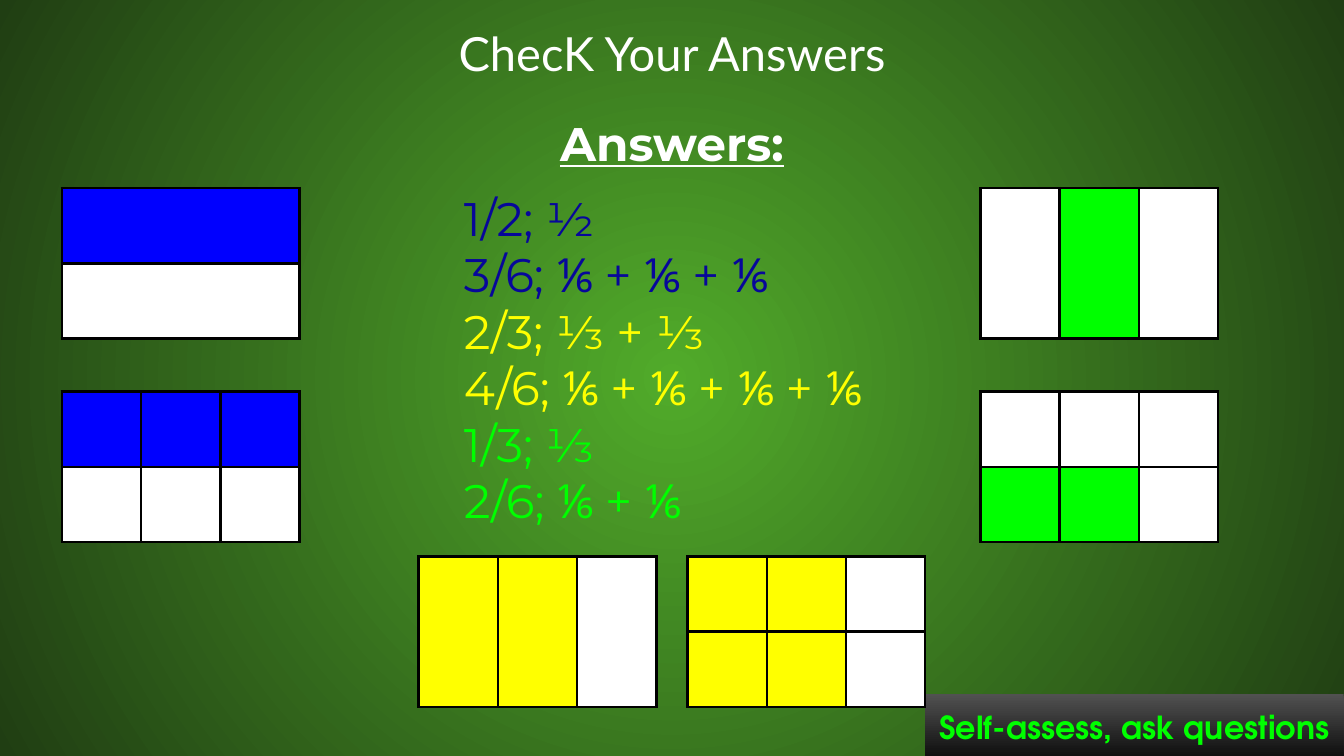
"""Build the fraction answers slide with its six shaded fraction grids."""
from dataclasses import dataclass
from typing import Any

from lxml import etree
from pptx import Presentation
from pptx.dml.color import RGBColor
from pptx.enum.shapes import MSO_SHAPE
from pptx.enum.text import MSO_ANCHOR, PP_ALIGN
from pptx.oxml.ns import qn
from pptx.util import Inches, Pt

RECTANGLE = MSO_SHAPE.RECTANGLE
TOP = MSO_ANCHOR.TOP
CENTER, LEFT = PP_ALIGN.CENTER, PP_ALIGN.LEFT
UNIT = Inches(0.1)
COLUMNS, ROWS = 3, 2
CELL_WIDTH, CELL_HEIGHT = 5.9, 5.6
WHITE, BLACK, NAVY = "FFFFFF", "000000", "07079A"
BLUE, YELLOW, GREEN = "0000FF", "FFFF00", "00FF00"
TITLE_FORMAT = {"name": "Lato", "size": Pt(25.2)}
ANSWER_FORMAT = {"name": "Montserrat", "size": Pt(25.2)}
HEADING_FORMAT = ANSWER_FORMAT | {"bold": True, "underline": True}
BANNER_FORMAT = {"name": "TeX Gyre Adventor", "size": Pt(17), "bold": True}


@dataclass(frozen=True)
class Area:
    """A place on the slide, in grid columns and rows."""
    left: float
    top: float
    width: float
    height: float

    def lengths(self) -> list[int]:
        """Return the place as slide lengths."""
        return [round(value * UNIT) for value in (self.left, self.top, self.width, self.height)]


@dataclass(frozen=True)
class Line:
    """A line of text with its colour and format."""
    text: str
    color: str
    style: dict[str, Any]
    alignment: PP_ALIGN = CENTER
    space_before: float = 0


@dataclass(frozen=True)
class FractionGrid:
    """A fraction picture; X marks a shaded cell."""
    left: float
    top: float
    color: str
    pattern: tuple[str, str]
    column_lines: bool = True
    row_lines: bool = True


GRIDS = (
    FractionGrid(4.6, 14, BLUE, ("XXX", "---"), column_lines=False),
    FractionGrid(4.6, 29.13, BLUE, ("XXX", "---")),
    FractionGrid(51.15, 41.4, YELLOW, ("XX-", "XX-")),
    FractionGrid(31.15, 41.4, YELLOW, ("XX-", "XX-"), row_lines=False),
    FractionGrid(72.94, 14, GREEN, ("-X-", "-X-"), row_lines=False),
    FractionGrid(72.94, 29.13, GREEN, ("---", "XX-")),
)
ANSWERS = (
    ("1/2; ½", NAVY), ("3/6; ⅙ + ⅙ + ⅙", NAVY),
    ("2/3; ⅓ + ⅓", YELLOW), ("4/6; ⅙ + ⅙ + ⅙ + ⅙", YELLOW),
    ("1/3; ⅓", GREEN), ("2/6; ⅙ + ⅙", GREEN),
)


def color_of(value: str) -> RGBColor:
    """Turn a hex string into a colour."""
    return RGBColor.from_string(value)


def set_gradient(fill: Any, start: str, end: str) -> None:
    """Give a fill a gradient of two colours."""
    fill.gradient()
    for stop, value in zip(fill.gradient_stops, (start, end)):
        stop.color.rgb = color_of(value)


def paint_background(page: Any) -> None:
    """Paint a radial green background."""
    set_gradient(page.background.fill, "51AB2A", "203E13")
    linear = next(page.element.iter(qn("a:lin")))
    radial = etree.Element(qn("a:path"), {"path": "circle"})
    etree.SubElement(radial, qn("a:fillToRect"), dict.fromkeys("ltrb", "50000"))
    linear.getparent().replace(linear, radial)


def write_lines(shape: Any, lines: list[Line]) -> None:
    """Write formatted lines into a shape."""
    frame = shape.text_frame
    frame.word_wrap = True
    frame.vertical_anchor = TOP
    for side in ("left", "top", "right", "bottom"):
        setattr(frame, f"margin_{side}", UNIT)
    for index, line in enumerate(lines):
        para = frame.add_paragraph() if index else frame.paragraphs[0]
        para.alignment = line.alignment
        para.space_before = Pt(line.space_before)
        span = para.add_run()
        span.text = line.text
        span.font.color.rgb = color_of(line.color)
        for name, value in line.style.items():
            setattr(span.font, name, value)


def add_text(page: Any, area: Area, lines: list[Line]) -> None:
    """Add a text box."""
    write_lines(page.shapes.add_textbox(*area.lengths()), lines)


def add_banner(page: Any, area: Area, line: Line) -> None:
    """Add the shaded banner."""
    banner = page.shapes.add_shape(RECTANGLE, *area.lengths())
    banner.shadow.inherit = False
    banner.line.fill.background()
    set_gradient(banner.fill, "515151", "101010")
    banner.fill.gradient_angle = 270
    write_lines(banner, [line])


def set_borders(cell: Any, visible: dict[str, bool]) -> None:
    """Draw or hide each border of a cell."""
    properties = cell._tc.get_or_add_tcPr()
    for index, (side, shown) in enumerate(visible.items()):
        border = etree.Element(qn(f"a:ln{side}"), {"w": str(Pt(1.5))})
        if shown:
            solid = etree.SubElement(border, qn("a:solidFill"))
            etree.SubElement(solid, qn("a:srgbClr"), {"val": BLACK})
        else:
            etree.SubElement(border, qn("a:noFill"))
        properties.insert(index, border)


def add_grid(page: Any, grid: FractionGrid) -> None:
    """Add a fraction grid as a table."""
    area = Area(grid.left, grid.top, COLUMNS * CELL_WIDTH, ROWS * CELL_HEIGHT)
    table = page.shapes.add_table(ROWS, COLUMNS, *area.lengths()).table
    table.first_row = table.horz_banding = False
    for row, marks in enumerate(grid.pattern):
        for column, mark in enumerate(marks):
            cell = table.cell(row, column)
            cell.fill.solid()
            cell.fill.fore_color.rgb = color_of(grid.color if mark == "X" else WHITE)
            set_borders(cell, {
                "L": grid.column_lines or column == 0,
                "R": grid.column_lines or column == COLUMNS - 1,
                "T": grid.row_lines or row == 0,
                "B": grid.row_lines or row == ROWS - 1,
            })


def main() -> None:
    """Build and save the deck."""
    deck = Presentation()
    deck.slide_width = Inches(10)
    deck.slide_height = deck.slide_width * 9 // 16
    page = deck.slides.add_slide(deck.slide_layouts[6])
    paint_background(page)
    add_banner(page, Area(68.84, 51.64, 31.15, 4.6),
               Line("Self-assess, ask questions", GREEN, BANNER_FORMAT))
    add_text(page, Area(0.9, 0.8, 98.2, 6), [Line("ChecK Your Answers", WHITE, TITLE_FORMAT)])
    answers = [Line(text, color, ANSWER_FORMAT, LEFT, 0 if index else 10)
               for index, (text, color) in enumerate(ANSWERS)]
    add_text(page, Area(33.54, 7.5, 32.9, 33.2),
             [Line("Answers:", WHITE, HEADING_FORMAT), *answers])
    for grid in GRIDS:
        add_grid(page, grid)
    deck.save("out.pptx")


if __name__ == "__main__":
    main()
